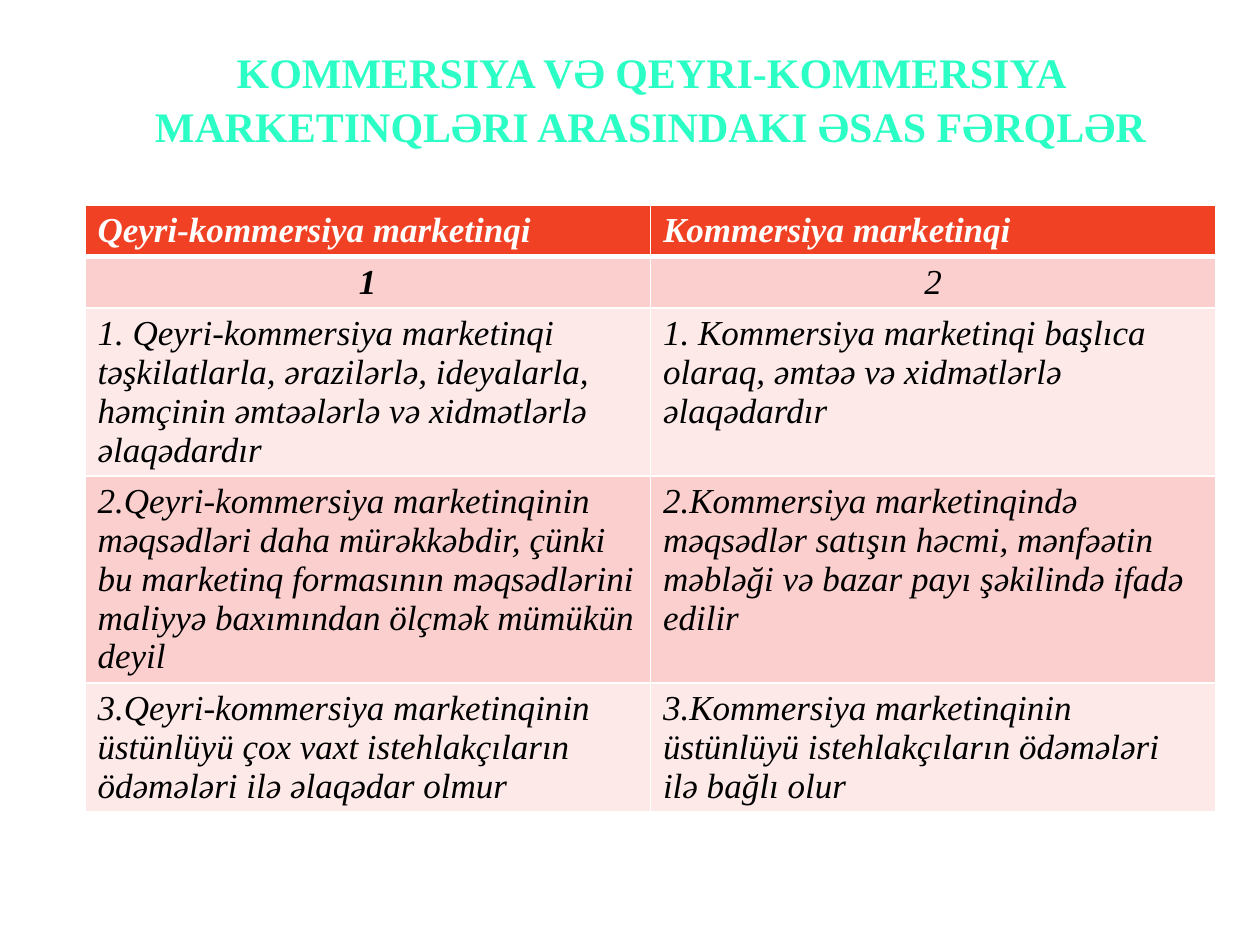
from pptx import Presentation
from pptx.dml.color import RGBColor as RGB
from pptx.enum.text import MSO_ANCHOR as Anchor, MSO_AUTO_SIZE as Fit, PP_ALIGN as Align
from pptx.oxml import parse_xml
from pptx.oxml.ns import nsdecls
from pptx.util import Pt

TITLE = "KOMMERSIYA VƏ QEYRI-KOMMERSIYA MARKETINQLƏRI ARASINDAKI ƏSAS FƏRQLƏR"
ROWS = [
    ("Qeyri-kommersiya marketinqi", "Kommersiya marketinqi"),
    ("1", "2"),
    ("1. Qeyri-kommersiya marketinqi təşkilatlarla, ərazilərlə, ideyalarla, "
     "həmçinin əmtəələrlə və xidmətlərlə əlaqədardır",
     "1. Kommersiya marketinqi başlıca olaraq, əmtəə və xidmətlərlə əlaqədardır"),
    ("2.Qeyri-kommersiya marketinqinin məqsədləri daha mürəkkəbdir, çünki bu marketinq "
     "formasının məqsədlərini maliyyə baxımından ölçmək mümükün deyil",
     "2.Kommersiya marketinqində məqsədlər satışın həcmi, mənfəətin məbləği və bazar payı "
     "şəkilində ifadə edilir"),
    ("3.Qeyri-kommersiya marketinqinin üstünlüyü çox vaxt istehlakçıların ödəmələri ilə "
     "əlaqədar olmur",
     "3.Kommersiya marketinqinin üstünlüyü istehlakçıların ödəmələri ilə bağlı olur"),
]
HEIGHTS = [51, 51, 168, 207, 129]
LEFT, WIDTH = 85, 1131
FONT = "Times New Roman"
COLORS = {"title": "2CFFC5", "head": "F14124", "dark": "FACFCD", "light": "FCE9E8",
          "white": "FFFFFF", "black": "000000"}


def px(n):
    return round(n * 914400 / 126)


def color(name):
    return RGB.from_string(COLORS[name])


def style(para, size, tint, bold, italic):
    for run in para.runs:
        font = run.font
        font.name, font.size, font.bold, font.italic = FONT, Pt(size), bold, italic
        font.color.rgb = color(tint)


def border(cell, widths):
    props = cell._tc.get_or_add_tcPr()
    for spot, (side, width) in enumerate(widths.items()):
        props.insert(spot, parse_xml(
            f'<a:ln{side} {nsdecls("a")} w="{Pt(width)}"><a:solidFill>'
            f'<a:srgbClr val="{COLORS["white"]}"/></a:solidFill></a:ln{side}>'))


def add_title(slide):
    title = slide.shapes.title
    title.left, title.top, title.width, title.height = px(LEFT), px(37), px(WIDTH), px(114)
    frame = title.text_frame
    frame.text = TITLE
    frame.word_wrap, frame.auto_size = True, Fit.NONE
    frame.vertical_anchor = Anchor.TOP
    para = frame.paragraphs[0]
    para.alignment, para.line_spacing = Align.CENTER, 1.07
    style(para, 24, "title", True, False)


def add_grid(slide):
    grid = slide.shapes.add_table(len(ROWS), len(ROWS[0]), px(LEFT), px(205),
                                  px(WIDTH), px(sum(HEIGHTS))).table
    for r, (texts, height) in enumerate(zip(ROWS, HEIGHTS)):
        grid.rows[r].height = px(height)
        head = r == 0
        fill = "head" if head else "dark" if r % 2 else "light"
        for c, text in enumerate(texts):
            cell = grid.cell(r, c)
            cell.text = text
            cell.fill.solid()
            cell.fill.fore_color.rgb = color(fill)
            border(cell, {"L": 1, "R": 1, "T": 3 if r == 1 else 1, "B": 3 if head else 1})
            para = cell.text_frame.paragraphs[0]
            para.alignment = Align.CENTER if r == 1 else Align.LEFT
            style(para, 20, "white" if head else "black", head or (r, c) == (1, 0), True)


def main():
    deck = Presentation()
    deck.slide_width, deck.slide_height = px(1260), px(945)
    slide = deck.slides.add_slide(deck.slide_layouts[5])
    add_grid(slide)
    add_title(slide)
    deck.save("out.pptx")


if __name__ == "__main__":
    main()
